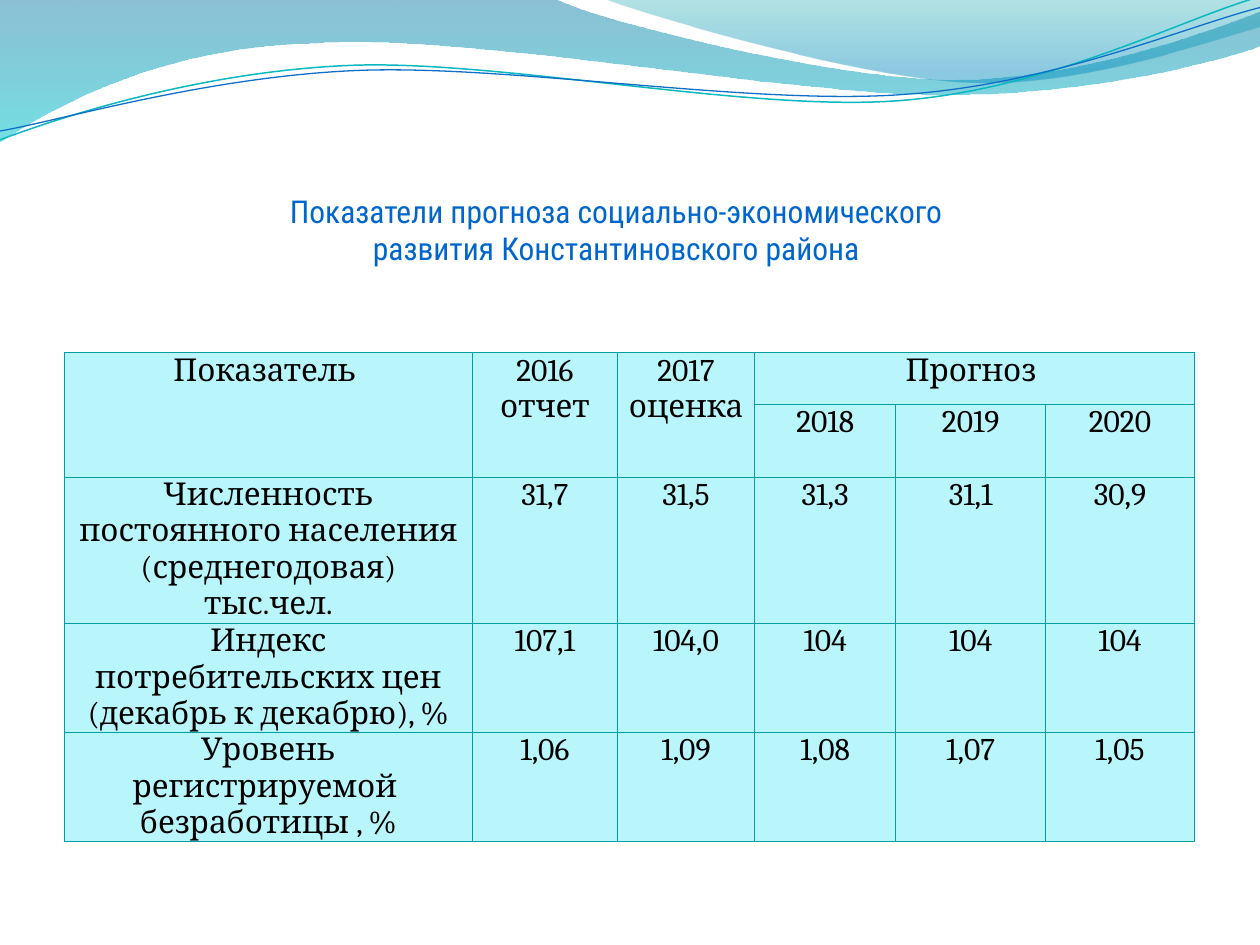
import pptx
import pptx.util
import pptx.dml.color
import pptx.enum.text
import pptx.oxml
import pptx.oxml.ns
from lxml import etree

Inches, Pt = pptx.util.Inches, pptx.util.Pt
RGB = pptx.dml.color.RGBColor
qn = pptx.oxml.ns.qn
CENTER = pptx.enum.text.PP_ALIGN.CENTER
TOP = pptx.enum.text.MSO_ANCHOR.TOP

BLUE = RGB(0x00, 0x66, 0xCC)
GLOW = RGB(0x99, 0xCC, 0xFF)
BLACK = RGB(0, 0, 0)
CELL = RGB(0xB9, 0xF6, 0xFC)
EDGE = RGB(0x06, 0x9C, 0xA3)
TEAL = RGB(0x0A, 0xB8, 0xBF)
NAVY = RGB(0x0F, 0x6F, 0xC6)

TITLE = ["Показатели прогноза социально-экономического ",
         "развития Константиновского района "]
ROWS = [
    ["Показатель ", "2016 отчет", "2017 оценка", "Прогноз ", "", ""],
    ["", "", "", "2018", "2019", "2020"],
    ["Численность постоянного населения (среднегодовая) тыс.чел.",
     "31,7", "31,5", "31,3", "31,1", "30,9"],
    ["Индекс потребительских цен (декабрь к декабрю), %",
     "107,1", "104,0", "104", "104", "104"],
    ["Уровень регистрируемой  безработицы , %",
     "1,06", "1,09", "1,08", "1,07", "1,05"],
]
MERGES = [(0, 0, 1, 0), (0, 1, 1, 1), (0, 2, 1, 2), (0, 3, 0, 5)]
WIDTHS = [3.24, 1.15, 1.09, 1.12, 1.19, 1.18]
HEIGHTS = [0.41, 0.57, 1.16, 0.86, 0.86]

# A pair is a straight step, six numbers are a Bezier curve.
# Gradient stops: position, colour, opacity in percent.
WAVES = [
    ([(0, 0), (4.4, -0.01), (4.76, 0.17, 6.64, 0.63, 7.58, 0.63),
      (8.53, 0.63, 9.58, 0.26, 10, 0.09), (10.01, 0.36),
      (9.83, 0.44, 8.7, 0.76, 7.46, 0.75),
      (6.22, 0.75, 3.82, 0.28, 2.57, 0.34),
      (1.29, 0.36, 0.46, 0.83, -0.01, 1.13)],
     [(0, RGB(0x00, 0x74, 0xA1), 45), (1, RGB(0x00, 0xC6, 0xCF), 55)]),
    ([(4.79, -0.01), (5.09, 0.11, 6.82, 0.62, 7.69, 0.65),
      (8.56, 0.69, 9.61, 0.32, 10, 0.21), (10, 0)],
     [(0, RGB(0x00, 0xA1, 0xA9), 30), (0.8, RGB(0x00, 0x8B, 0xBF), 45)]),
]
LINES = [
    ([(0, 1.11), (0.48, 0.93, 1.58, 0.57, 2.77, 0.52),
      (3.95, 0.47, 5.93, 0.89, 7.13, 0.8),
      (8.33, 0.71, 9.38, 0.15, 9.98, -0.02)], TEAL, 0.85),
    ([(0, 1.04), (0.47, 0.96, 1.64, 0.61, 2.83, 0.56),
      (4.03, 0.51, 5.97, 0.84, 7.17, 0.75),
      (8.36, 0.67, 9.41, 0.21, 10, 0.06)], NAVY, 0.75),
]


def draw(steps, close):
    """Build an outline, joining each curve's three points into one Bezier."""
    dots = [(Inches(step[i]), Inches(step[i + 1]))
            for step in steps for i in range(0, len(step), 2)]
    pen = slide.shapes.build_freeform(*dots[0])
    pen.add_line_segments(dots[1:], close=close)
    shape = pen.convert_to_shape()
    shape.shadow.inherit = False
    legs = iter(list(shape._element.iter(qn("a:lnTo"))))
    for step in steps[1:]:
        leg = next(legs)
        if len(step) == 6:
            leg.addprevious(etree.Element(qn("a:cubicBezTo")))
            curve = leg.getprevious()
            for part in (leg, next(legs), next(legs)):
                curve.append(part[0])
                part.getparent().remove(part)
    return shape


def stroke(parent, tag, color, width):
    """Add a solid outline element of the given tag."""
    line = etree.SubElement(parent, qn(tag), w=str(Pt(width)))
    fill = etree.SubElement(line, qn("a:solidFill"))
    etree.SubElement(fill, qn("a:srgbClr"), val=str(color))
    return line


def style(font, form):
    for name, value in form.items():
        setattr(font, name, value)


deck = pptx.Presentation()
deck.slide_width, deck.slide_height = Inches(10), Inches(7.5)
slide = deck.slides.add_slide(deck.slide_layouts[5])

for steps, stops in WAVES:
    wave = draw(steps, True)
    wave.line.fill.background()
    wave.fill.gradient()
    wave.fill.gradient_angle = 270
    for stop, (place, color, _) in zip(wave.fill.gradient_stops, stops):
        stop.position = place
        stop.color.rgb = color
    for node, (_, _, alpha) in zip(wave._element.iter(qn("a:gs")), stops):
        etree.SubElement(node[0], qn("a:alpha"), val=str(alpha * 1000))

for steps, color, width in LINES:
    line = draw(steps, False)
    line.fill.background()
    line.line.color.rgb = color
    line.line.width = Pt(width)

title = slide.shapes.title
slide.shapes._spTree.append(title._element)  # in front of the waves
title.left, title.top = Inches(0.51), Inches(1.47)
title.width, title.height = Inches(8.82), Inches(0.94)
frame = title.text_frame
frame.word_wrap = True
frame.auto_size = pptx.enum.text.MSO_AUTO_SIZE.NONE
frame.vertical_anchor = TOP
frame.text = "\n".join(TITLE)
for para in frame.paragraphs:
    para.alignment = CENTER
    run = para.runs[0]
    style(run.font, {"name": "Roboto Condensed", "size": Pt(18)})
    run.font._element.insert(0, stroke(run.font._element, "a:ln", GLOW, 1.5))
    run.font.fill.solid()
    run.font.fill.fore_color.rgb = BLUE

table = slide.shapes.add_table(
    len(ROWS), len(WIDTHS), Inches(0.51), Inches(2.8),
    Inches(sum(WIDTHS)), Inches(sum(HEIGHTS))).table
for col, width in zip(table.columns, WIDTHS):
    col.width = Inches(width)
for row, height in zip(table.rows, HEIGHTS):
    row.height = Inches(height)

BOX = {"margin_left": Inches(0.08), "margin_right": Inches(0.08),
       "margin_top": 0, "margin_bottom": 0, "vertical_anchor": TOP}
for r, texts in enumerate(ROWS):
    for c, text in enumerate(texts):
        cell = table.cell(r, c)
        style(cell, BOX)
        cell.text = text
        para = cell.text_frame.paragraphs[0]
        para.alignment = CENTER
        for run in para.runs:
            style(run.font, {"name": "Cambria", "size": Pt(18), "bold": False})
            run.font.color.rgb = BLACK
        for side in "LRTB":
            stroke(cell._tc.get_or_add_tcPr(), "a:ln" + side, EDGE, 0.75)
        cell.fill.solid()
        cell.fill.fore_color.rgb = CELL
for top, left, low, right in MERGES:
    table.cell(top, left).merge(table.cell(low, right))

deck.save("out.pptx")
